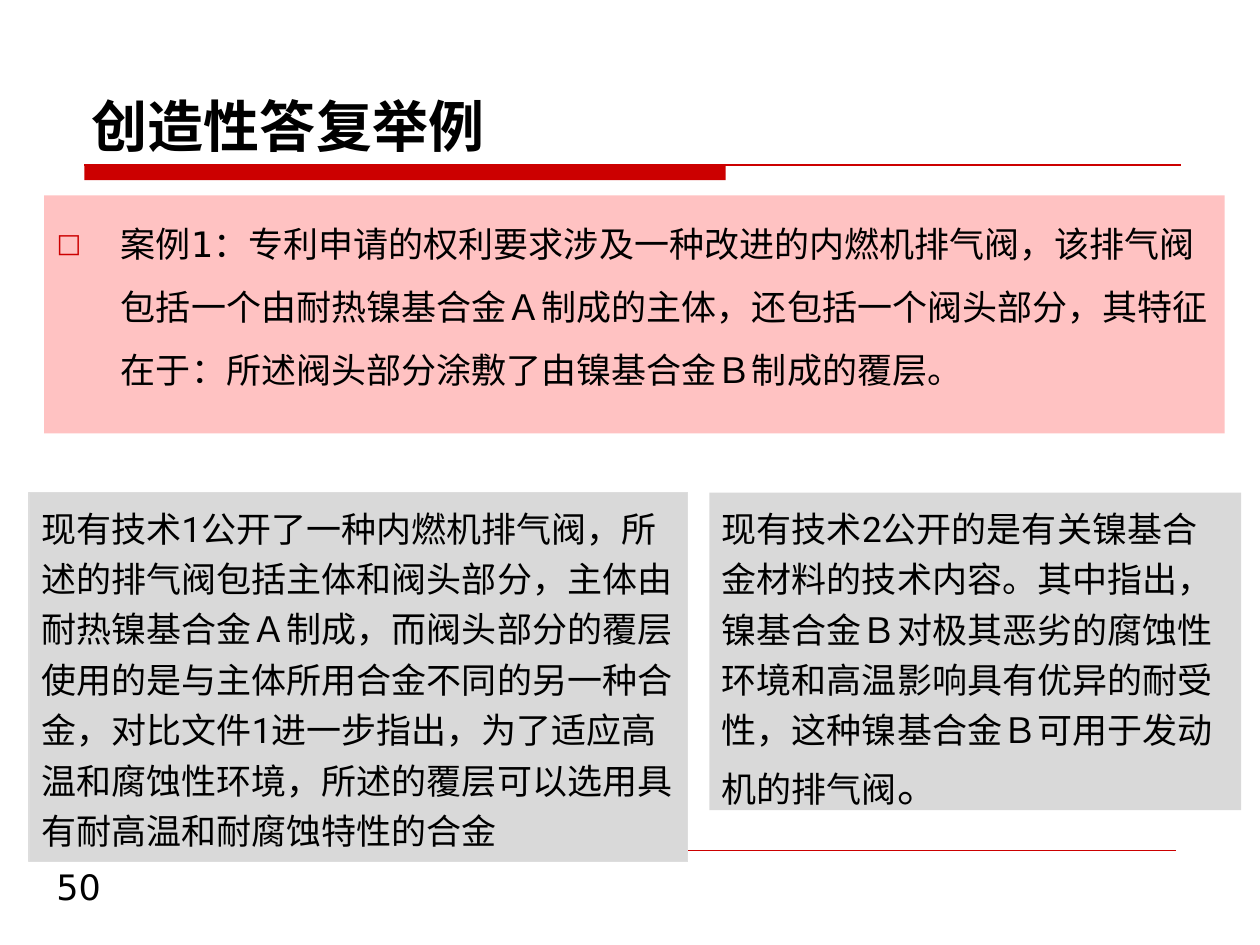
from lxml import etree
from pptx import Presentation
from pptx.dml.color import RGBColor
from pptx.enum.shapes import MSO_CONNECTOR, MSO_SHAPE
from pptx.enum.text import MSO_ANCHOR, MSO_AUTO_SIZE, PP_ALIGN
from pptx.oxml.ns import qn
from pptx.util import Inches, Pt

LEFT = PP_ALIGN.LEFT
BOTTOM, TOP = MSO_ANCHOR.BOTTOM, MSO_ANCHOR.TOP
NO_FIT, GROW = MSO_AUTO_SIZE.NONE, MSO_AUTO_SIZE.SHAPE_TO_FIT_TEXT
RECTANGLE, STRAIGHT = MSO_SHAPE.RECTANGLE, MSO_CONNECTOR.STRAIGHT

COLORS = {
    "accent": "CC0000",
    "claim": "FFC2C2",
    "prior_art": "D9D9D9",
    "border": "DDDDDD",
    "text": "000000",
}
HEADING_FONT = "DejaVu Sans"
PRIOR_ART_FONT = "Roboto"

TITLE = "创造性答复举例"
CLAIM = (
    "案例1：专利申请的权利要求涉及一种改进的内燃机排气阀，该排气阀包括一个由耐热镍基合金Ａ制成的主体，"
    "还包括一个阀头部分，其特征在于：所述阀头部分涂敷了由镍基合金Ｂ制成的覆层。"
)
PRIOR_ART_1 = (
    "现有技术1公开了一种内燃机排气阀，所述的排气阀包括主体和阀头部分，主体由耐热镍基合金Ａ制成，"
    "而阀头部分的覆层使用的是与主体所用合金不同的另一种合金，对比文件1进一步指出，"
    "为了适应高温和腐蚀性环境，所述的覆层可以选用具有耐高温和耐腐蚀特性的合金"
)
PRIOR_ART_2 = (
    "现有技术2公开的是有关镍基合金材料的技术内容。其中指出，镍基合金Ｂ对极其恶劣的腐蚀性环境和高温影响"
    "具有优异的耐受性，这种镍基合金Ｂ可用于发动机的排气阀"
)


def color(name):
    return RGBColor.from_string(COLORS[name])


def paint(shape, name):
    shape.fill.solid()
    shape.fill.fore_color.rgb = color(name)


def place(shape, left, top, width, height):
    shape.left, shape.top = Inches(left), Inches(top)
    shape.width, shape.height = Inches(width), Inches(height)


def write(box, spans, font, spacing=1.0, anchor=TOP, fit=NO_FIT, bold=False):
    """Fill the box with one paragraph of (text, size) spans."""
    frame = box.text_frame
    frame.word_wrap = True
    frame.auto_size = fit
    frame.vertical_anchor = anchor
    para = frame.paragraphs[0]
    para.alignment = LEFT
    para.line_spacing = spacing
    para.space_before = Pt(0)
    for text, size in spans:
        span = para.add_run()
        span.text = text
        span.font.name = font
        span.font.size = Pt(size)
        span.font.bold = bold
        span.font.color.rgb = color("text")
    return para


def add_square_bullet(para, indent):
    properties = para._p.get_or_add_pPr()
    properties.set("marL", str(Inches(indent)))
    properties.set("indent", str(-Inches(indent)))
    bullet_color = etree.SubElement(properties, qn("a:buClr"))
    etree.SubElement(bullet_color, qn("a:srgbClr"), val=COLORS["accent"])
    etree.SubElement(properties, qn("a:buSzPct"), val="75000")
    etree.SubElement(properties, qn("a:buFont"), typeface=HEADING_FONT)
    etree.SubElement(properties, qn("a:buChar"), char="□")


def add_rule(page, left, right, top, weight):
    rule = page.shapes.add_connector(
        STRAIGHT, Inches(left), Inches(top), Inches(right), Inches(top))
    rule.line.color.rgb = color("accent")
    rule.line.width = Pt(weight)
    etree.SubElement(rule._element.spPr, qn("a:effectLst"))


def add_bar(page, left, top, width, height):
    bar = page.shapes.add_shape(
        RECTANGLE, Inches(left), Inches(top), Inches(width), Inches(height))
    bar.shadow.inherit = False
    paint(bar, "accent")
    bar.line.fill.background()


def add_text_box(page, left, top, width, height):
    return page.shapes.add_textbox(
        Inches(left), Inches(top), Inches(width), Inches(height))


def add_prior_art(page, left, width, height, spans):
    box = add_text_box(page, left, 3.91, width, height)
    paint(box, "prior_art")
    write(box, spans, PRIOR_ART_FONT, spacing=1.2, fit=GROW)
    return box


def main():
    deck = Presentation()
    deck.slide_width, deck.slide_height = Inches(10), Inches(7.5)
    page = deck.slides.add_slide(deck.slide_layouts[1])

    title = page.shapes.title
    place(title, 0.63, 0.33, 8.75, 0.98)
    write(title, [(TITLE, 32)], HEADING_FONT, anchor=BOTTOM, bold=True)

    add_bar(page, 0.67, 1.31, 5.09, 0.12)
    add_rule(page, 0.67, 9.37, 1.31, 0.75)
    add_rule(page, 0.67, 9.33, 6.75, 0.25)

    claim = page.placeholders[1]
    place(claim, 0.35, 1.55, 9.37, 1.89)
    paint(claim, "claim")
    para = write(claim, [(CLAIM, 20)], HEADING_FONT, spacing=1.5)
    add_square_bullet(para, 0.51)

    number = add_text_box(page, 0.35, 6.82, 2.17, 0.52)
    write(number, [("50", 20)], HEADING_FONT)

    first = add_prior_art(page, 0.23, 5.23, 2.93, [(PRIOR_ART_1, 20)])
    first.line.color.rgb = color("border")
    first.line.width = Pt(0.75)
    add_prior_art(page, 5.63, 4.22, 2.52, [(PRIOR_ART_2, 20), ("。", 24)])

    deck.save("out.pptx")


if __name__ == "__main__":
    main()
